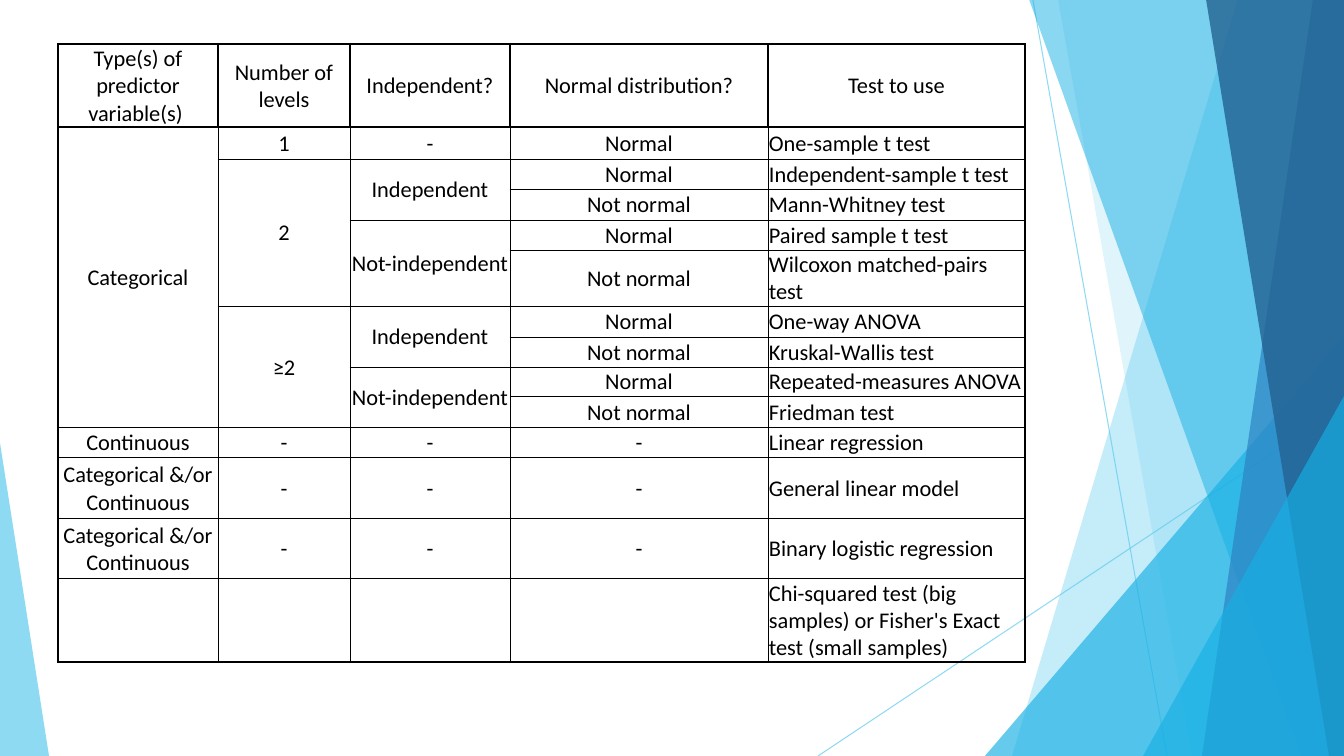
from lxml.etree import SubElement
from pptx import Presentation
from pptx.dml.color import RGBColor
from pptx.enum.shapes import MSO_CONNECTOR
from pptx.enum.text import MSO_ANCHOR, PP_ALIGN
from pptx.oxml.ns import qn
from pptx.util import Emu, Pt

WIDE, HIGH = 1344, 756
SCALE = 914400 / 100.8  # EMU in one px
BLACK = RGBColor(0x00, 0x00, 0x00)
SKY = RGBColor(0x5F, 0xCB, 0xEF)
AQUA = RGBColor(0x17, 0xB0, 0xE4)
BLUE = RGBColor(0x2E, 0x83, 0xC3)
NAVY = RGBColor(0x23, 0x62, 0x92)

# Slanted panels: colour, opacity in percent, corners
PANELS = [
    (SKY, 36, [(1238, -1), (WIDE, -1), (WIDE, HIGH), (1012, HIGH)]),
    (SKY, 20, [(1058, -1), (WIDE, -1), (WIDE, HIGH), (1192, HIGH)]),
    (AQUA, 66, [(985, HIGH), (WIDE, 336), (WIDE, HIGH)]),
    (AQUA, 50, [(1029, -1), (WIDE, -1), (WIDE, HIGH), (1301, HIGH)]),
    (BLUE, 70, [(1313, -1), (WIDE, -1), (WIDE, HIGH), (1202, HIGH)]),
    (NAVY, 80, [(1206, -1), (WIDE, -1), (WIDE, HIGH), (1329, HIGH)]),
    (AQUA, 66, [(1143, HIGH), (WIDE, 396), (WIDE, HIGH)]),
    (SKY, 70, [(0, HIGH), (0, 443), (49, HIGH)]),
]
RAYS = [((1033, 0), (1167, HIGH)), ((WIDE, 406), (818, HIGH))]

# Table content; cells under a span stay empty
MIXED = "Categorical &/or Continuous"
ROWS = [
    ["Type(s) of predictor variable(s) ", "Number of levels", "Independent?",
     "Normal distribution?", "Test to use"],
    ["Categorical", "1", "-", "Normal", "One-sample t test"],
    ["", "2", "Independent", "Normal", "Independent-sample t test"],
    ["", "", "", "Not normal", "Mann-Whitney test"],
    ["", "", "Not-independent", "Normal", "Paired sample t test"],
    ["", "", "", "Not normal", "Wilcoxon matched-pairs test"],
    ["", "≥2", "Independent", "Normal", "One-way ANOVA"],
    ["", "", "", "Not normal", "Kruskal-Wallis test"],
    ["", "", "Not-independent", "Normal", "Repeated-measures ANOVA"],
    ["", "", "", "Not normal", "Friedman test"],
    ["Continuous", "-", "-", "-", "Linear regression"],
    [MIXED, "-", "-", "-", "General linear model"],
    [MIXED, "-", "-", "-", "Binary logistic regression"],
    ["", "", "", "",
     "Chi-squared test (big samples) or Fisher's Exact test (small samples)"],
]
WIDTHS = [160, 132, 160, 258, 257]
HEIGHTS = [64, 32] + [30, 31, 30] * 3 + [61, 60, 82]
SPANS = {(1, 0): 9, (2, 1): 4, (6, 1): 4} | {(row, 2): 2 for row in range(2, 10, 2)}


def px(count):
    return Emu(round(count * SCALE))


def assign(item, values):
    for name, value in values.items():
        setattr(item, name, value)


class Painter:
    font = {"name": "Calibri", "size": Pt(16), "bold": False}
    inset = {"margin_left": px(1), "margin_right": px(1), "margin_top": px(1),
             "margin_bottom": 0, "vertical_anchor": MSO_ANCHOR.MIDDLE}
    plain = {"first_row": False, "horz_banding": False}
    thin, thick = Pt(0.5), Pt(2)

    def __init__(self, slide):
        self.slide = slide
        self.shapes = slide.shapes

    def fade(self, shape, percent):
        for tint in shape._element.spPr.iter(qn("a:srgbClr")):
            SubElement(tint, qn("a:alpha"), val=str(percent * 1000))

    def ray(self, start, end):
        line = self.shapes.add_connector(
            MSO_CONNECTOR.STRAIGHT, *map(px, start + end))
        line.line.color.rgb = SKY
        line.line.width = Pt(0.75)
        self.fade(line, 70)
        SubElement(line._element.spPr, qn("a:effectLst"))

    def panel(self, color, percent, points):
        form = self.shapes.build_freeform(*points[0], scale=SCALE)
        form.add_line_segments(points[1:], close=True)
        shape = form.convert_to_shape()
        shape.shadow.inherit = False
        shape.fill.solid()
        shape.fill.fore_color.rgb = color
        shape.line.fill.background()
        self.fade(shape, percent)

    def edge(self, cell, side, width):
        line = SubElement(cell._tc.get_or_add_tcPr(), qn("a:ln" + side), w=str(width))
        fill = SubElement(line, qn("a:solidFill"))
        SubElement(fill, qn("a:srgbClr"), val=str(BLACK))

    def cell(self, cell, text, heavy, align):
        assign(cell, self.inset)
        for side in "LRTB":
            self.edge(cell, side, self.thick if side in heavy else self.thin)
        cell.fill.background()
        if text:
            cell.text = text
            para = cell.text_frame.paragraphs[0]
            para.alignment = align
            font = para.runs[0].font
            assign(font, self.font)
            font.color.rgb = BLACK

    def table(self, left, top):
        frame = self.shapes.add_table(
            len(ROWS), len(WIDTHS), px(left), px(top),
            px(sum(WIDTHS)), px(sum(HEIGHTS)))
        table = frame.table
        assign(table, self.plain)
        for track, size in zip(table.columns, WIDTHS):
            track.width = px(size)
        for track, size in zip(table.rows, HEIGHTS):
            track.height = px(size)
        last, end = len(ROWS) - 1, len(WIDTHS) - 1
        for row, texts in enumerate(ROWS):
            for col, text in enumerate(texts):
                # Heavy lines frame the table and each header cell
                rules = {"L": row == 0 or col == 0, "R": row == 0 or col == end,
                         "T": row < 2, "B": row in (0, last)}
                heavy = [side for side, on in rules.items() if on]
                align = PP_ALIGN.LEFT if row and col == end else PP_ALIGN.CENTER
                self.cell(table.cell(row, col), text, heavy, align)
        for (row, col), count in SPANS.items():
            table.cell(row, col).merge(table.cell(row + count - 1, col))


def main():
    deck = Presentation()
    assign(deck, {"slide_width": px(WIDE), "slide_height": px(HIGH)})
    paint = Painter(deck.slides.add_slide(deck.slide_layouts[6]))
    # Backdrop
    for start, end in RAYS:
        paint.ray(start, end)
    for color, percent, points in PANELS:
        paint.panel(color, percent, points)
    # Guide to choosing a test
    paint.table(58, 44)
    deck.save("out.pptx")


if __name__ == "__main__":
    main()
